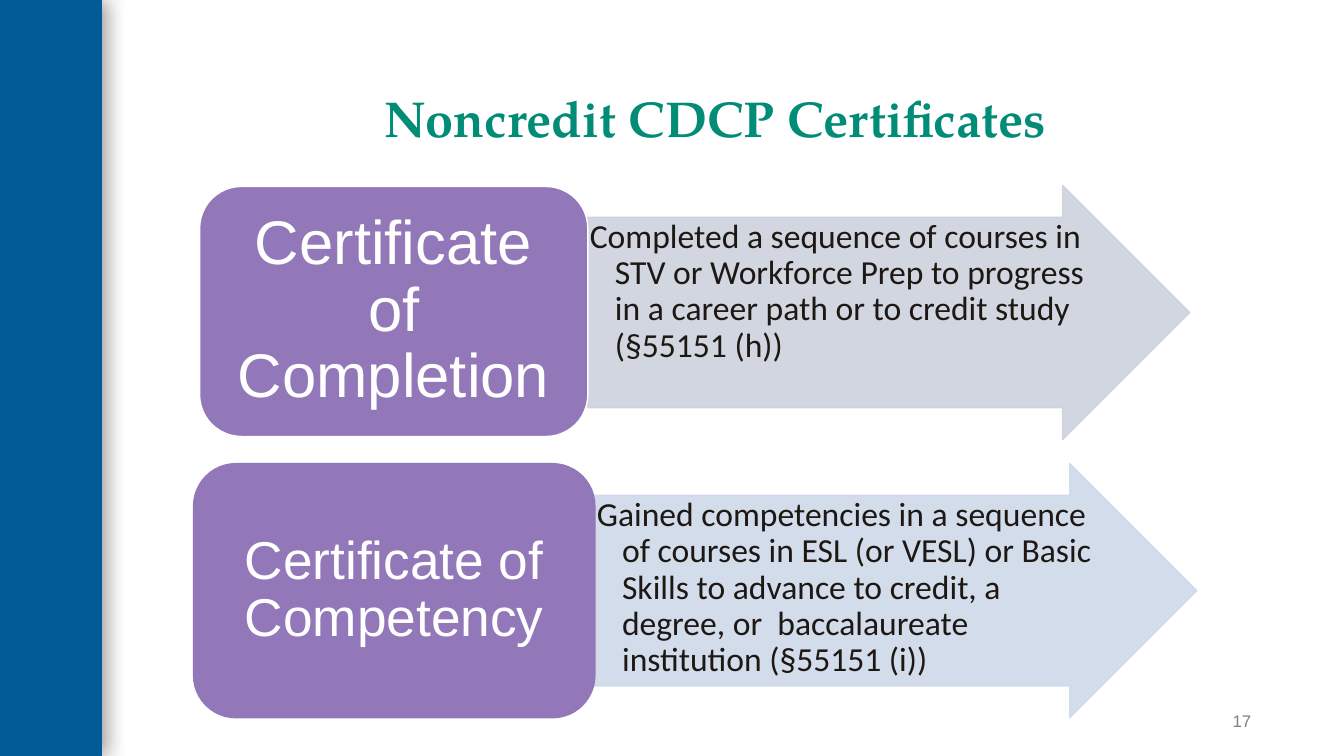
from lxml import etree
from pptx import Presentation
from pptx.dml.color import RGBColor
from pptx.enum.shapes import MSO_SHAPE
from pptx.enum.text import MSO_ANCHOR, PP_ALIGN
from pptx.oxml import parse_xml
from pptx.oxml.ns import nsdecls, qn
from pptx.util import Emu, Pt

RECT = MSO_SHAPE.RECTANGLE
ROUNDED = MSO_SHAPE.ROUNDED_RECTANGLE
ARROW = MSO_SHAPE.RIGHT_ARROW
TOP, MIDDLE, BOTTOM = MSO_ANCHOR.TOP, MSO_ANCHOR.MIDDLE, MSO_ANCHOR.BOTTOM
LEFT, CENTER, RIGHT = PP_ALIGN.LEFT, PP_ALIGN.CENTER, PP_ALIGN.RIGHT

EMU_PER_PX = 9144  # 100 px to the inch
COLORS = {
    "band": "005B96", "title": "008C77", "number": "7F7F7F",
    "purple": "9277B9", "white": "FFFFFF", "body": "1D1813",
    "arrow_grey": "CCD2DD", "arrow_blue": "CFD9E9",
}
CERTIFICATES = [
    {
        "name": "Certificate of Completion", "size": 44, "inset": (18, 9, 18, 9),
        "label_box": (198, 185, 385, 248), "outline": "white",
        "arrow_box": (583, 184, 597, 252), "arrow_color": "arrow_grey",
        "detail": "Completed a sequence of courses in STV or Workforce Prep to "
                  "progress in a career path or to credit study (§55151 (h))",
    },
    {
        "name": "Certificate of Competency", "size": 38, "inset": (16, 8, 16, 8),
        "label_box": (192, 460, 398, 252), "outline": "purple",
        "arrow_box": (590, 460, 597, 252), "arrow_color": "arrow_blue",
        "detail": "Gained competencies in a sequence of courses in ESL (or VESL) "
                  "or Basic Skills to advance to credit, a degree, or  "
                  "baccalaureate institution (§55151 (i))",
    },
]


def px(length):
    return Emu(length * EMU_PER_PX)


def rgb(name):
    return RGBColor.from_string(COLORS[name])


def add_filled(slide, kind, box, fill, outline=None):
    shape = slide.shapes.add_shape(kind, *map(px, box))
    shape.shadow.inherit = False
    shape.fill.solid()
    shape.fill.fore_color.rgb = rgb(fill)
    if outline:
        shape.line.color.rgb = rgb(outline)
        shape.line.width = Pt(1)
    else:
        shape.line.fill.background()
    return shape


def write(shape, text, font, size, color, align, anchor, inset, bold=False, spacing=0.9):
    frame = shape.text_frame
    frame.word_wrap = True
    frame.vertical_anchor = anchor
    (frame.margin_left, frame.margin_top,
     frame.margin_right, frame.margin_bottom) = map(px, inset)
    paragraph = frame.paragraphs[0]
    paragraph.alignment = align
    paragraph.line_spacing = spacing
    run = paragraph.add_run()
    run.text = text
    run.font.name = font
    run.font.size = Pt(size)
    run.font.bold = bold
    run.font.color.rgb = rgb(color)
    return paragraph


def draw_side_band(slide, box):
    band = add_filled(slide, RECT, box, "band")
    effects = band._element.spPr.find(qn("a:effectLst"))
    effects.append(parse_xml(
        f'<a:outerShdw {nsdecls("a")} blurRad="{Pt(15)}" dist="{Pt(3)}" dir="0" '
        'algn="l" rotWithShape="0"><a:srgbClr val="000000">'
        '<a:alpha val="40000"/></a:srgbClr></a:outerShdw>'))


def draw_title(slide, box):
    title = slide.shapes.add_textbox(*map(px, box))
    write(title, "Noncredit CDCP Certificates", "TeX Gyre Pagella", 36, "title",
          CENTER, BOTTOM, (10, 5, 10, 5), bold=True)


def draw_page_number(slide, box):
    number = slide.shapes.add_textbox(*map(px, box))
    write(number, "17", "Arial", 12, "number", RIGHT, MIDDLE, (10, 5, 0, 5), spacing=1.0)


def draw_detail_arrow(slide, box, color, detail):
    arrow = add_filled(slide, ARROW, box, color, color)
    arrow.adjustments[0], arrow.adjustments[1] = 0.75, 0.5
    for paint in arrow._element.spPr.iter(qn("a:srgbClr")):
        etree.SubElement(paint, qn("a:alpha")).set("val", "90000")
    paragraph = write(arrow, detail, "Calibri", 24, "body", LEFT, TOP, (2, 2, 2, 2))
    properties = paragraph._p.get_or_add_pPr()
    properties.set("marL", str(px(25)))
    properties.set("indent", str(px(-25)))


def draw_certificate(slide, certificate):
    draw_detail_arrow(slide, certificate["arrow_box"],
                      certificate["arrow_color"], certificate["detail"])
    label = add_filled(slide, ROUNDED, certificate["label_box"],
                       "purple", certificate["outline"])
    write(label, certificate["name"], "Arial", certificate["size"], "white",
          CENTER, MIDDLE, certificate["inset"])


def main():
    deck = Presentation()
    deck.slide_width, deck.slide_height = px(1333), px(750)
    slide = deck.slides.add_slide(deck.slide_layouts[6])
    draw_side_band(slide, (0, 0, 101, 750))
    draw_title(slide, (160, 40, 1099, 112))
    draw_page_number(slide, (1141, 695, 100, 40))
    for certificate in CERTIFICATES:
        draw_certificate(slide, certificate)
    deck.save("out.pptx")


if __name__ == "__main__":
    main()
